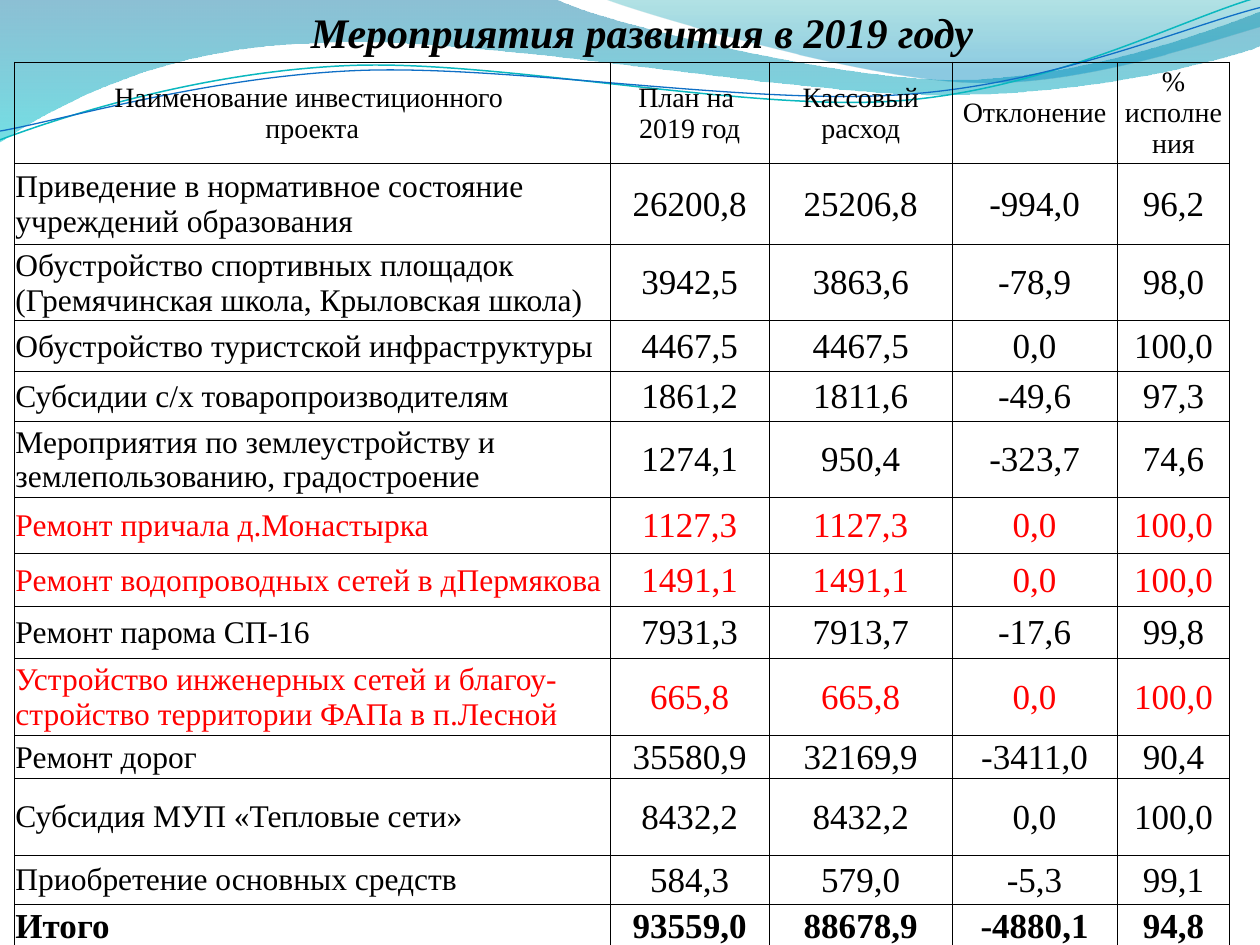
from dataclasses import dataclass
from math import cos, radians, sin
from typing import NamedTuple

from lxml.etree import SubElement
from pptx import Presentation
from pptx.dml.color import RGBColor as RGB
from pptx.enum.text import MSO_ANCHOR as ANCHOR, PP_ALIGN as ALIGN
from pptx.oxml.ns import qn
from pptx.util import Emu, Inches, Pt

COLUMNS, ROWS = 100, 75
UNIT = Inches(0.1)


@dataclass(frozen=True)
class Theme:
    font: str = "Times New Roman"
    text: str = "000000"
    accent: str = "FF0000"
    border: str = "000000"
    border_pt: float = 0.5
    title_pt: int = 24
    header_pt: int = 16
    name_pt: int = 18
    value_pt: int = 20


class Stop(NamedTuple):
    position: float
    color: str
    opacity: int


class Wave(NamedTuple):
    start: tuple
    segments: list
    stops: tuple = ()
    line: str = ""
    width: float = 0
    tilt: float = 0
    center: tuple = (0, 0)


class Project(NamedTuple):
    height: float
    cells: tuple
    red: bool = False
    total: bool = False


THEME = Theme()

WAVES = [
    Wave((0, 0), [
        (44, -0.1), (47.6, 1.7, 66.4, 6.3, 75.8, 6.3), (85.3, 6.3, 95.8, 2.6, 100, 0.9),
        (100.1, 3.6), (98.3, 4.4, 87, 7.6, 74.6, 7.5), (62.2, 7.5, 38.2, 2.8, 25.7, 3.4),
        (12.9, 3.6, 4.6, 8.3, -0.1, 11.3), (0, 0),
    ], stops=(Stop(0, "0074A1", 45), Stop(1, "00C6CF", 55))),
    Wave((47.9, -0.1), [
        (50.9, 1.1, 68.2, 6.2, 76.9, 6.5), (85.6, 6.9, 96.1, 3.2, 100, 2.1), (100, 0),
        (47.9, -0.1),
    ], stops=(Stop(0, "00A1A9", 30), Stop(0.8, "008BBF", 45))),
    Wave((0, 11.1), [
        (4.8, 9.3, 15.8, 5.7, 27.7, 5.2), (39.5, 4.7, 59.3, 8.9, 71.3, 8),
        (83.3, 7.1, 93.8, 1.5, 99.8, -0.2),
    ], line="0AB8BF", width=0.85, tilt=-2.7, center=(49.9, 5.75)),
    Wave((0, 10.4), [
        (4.7, 9.6, 16.4, 6.1, 28.3, 5.6), (40.3, 5.1, 59.7, 8.4, 71.7, 7.5),
        (83.6, 6.7, 94.1, 2.1, 100, 0.6),
    ], line="0F6FC6", width=0.75, tilt=-2.7, center=(49.95, 5.9)),
]

COLUMN_WIDTHS = (47.25, 12.65, 14.5, 13.1, 8.95)
HEADER = Project(7.4, ("Наименование инвестиционного \nпроекта", "План на \n2019 год",
                       "Кассовый расход", "Отклонение", "% исполнения"))
PROJECTS = [
    Project(6.4, ("Приведение в нормативное состояние учреждений образования",
                  "26200,8", "25206,8", "-994,0", "96,2")),
    Project(5.5, ("Обустройство спортивных площадок (Гремячинская школа, Крыловская школа)",
                  "3942,5", "3863,6", "-78,9", "98,0")),
    Project(4, ("Обустройство туристской инфраструктуры", "4467,5", "4467,5", "0,0", "100,0")),
    Project(3.95, ("Субсидии с/х товаропроизводителям", "1861,2", "1811,6", "-49,6", "97,3")),
    Project(6.1, ("Мероприятия по землеустройству и землепользованию, градостроение",
                  "1274,1", "950,4", "-323,7", "74,6")),
    Project(4.43, ("Ремонт причала д.Монастырка", "1127,3", "1127,3", "0,0", "100,0"), red=True),
    Project(4.2, ("Ремонт водопроводных сетей в дПермякова",
                  "1491,1", "1491,1", "0,0", "100,0"), red=True),
    Project(4.14, ("Ремонт парома СП-16", "7931,3", "7913,7", "-17,6", "99,8")),
    Project(6.1, ("Устройство инженерных сетей и благоу-стройство территории ФАПа в п.Лесной",
                  "665,8", "665,8", "0,0", "100,0"), red=True),
    Project(3.2, ("Ремонт дорог", "35580,9", "32169,9", "-3411,0", "90,4")),
    Project(6.1, ("Субсидия МУП «Тепловые сети»", "8432,2", "8432,2", "0,0", "100,0")),
    Project(3.9, ("Приобретение основных средств", "584,3", "579,0", "-5,3", "99,1")),
    Project(3.1, ("Итого", "93559,0", "88678,9", "-4880,1", "94,8"), total=True),
]


def grid(n: float) -> Emu:
    return Emu(round(n * UNIT))


def untilt(point: tuple, wave: Wave) -> tuple:
    angle, (cx, cy) = radians(-wave.tilt), wave.center
    dx, dy = point[0] - cx, point[1] - cy
    return (grid(cx + dx * cos(angle) - dy * sin(angle)),
            grid(cy + dx * sin(angle) + dy * cos(angle)))


def bend(sp, segments: list) -> None:
    lines = iter(list(sp._element.spPr.iter(qn("a:lnTo"))))
    for segment in segments:
        line = next(lines)
        if len(segment) == 6:
            line.tag = qn("a:cubicBezTo")
            for _ in range(2):
                control = next(lines)
                line.append(control[0])
                control.getparent().remove(control)


def draw_wave(s, wave: Wave) -> None:
    points = [pair for segment in wave.segments for pair in zip(segment[::2], segment[1::2])]
    start, *rest = [untilt(point, wave) for point in (wave.start, *points)]
    builder = s.shapes.build_freeform(*start)
    builder.add_line_segments(rest, close=bool(wave.stops))
    sp = builder.convert_to_shape()
    bend(sp, wave.segments)
    sp.rotation = wave.tilt
    sp.shadow.inherit = False
    if wave.stops:
        sp.line.fill.background()
        sp.fill.gradient()
        sp.fill.gradient_angle = 270
        for gradient_stop, stop in zip(sp.fill.gradient_stops, wave.stops):
            gradient_stop.position = stop.position
            gradient_stop.color.rgb = RGB.from_string(stop.color)
        for color, stop in zip(sp._element.spPr.iter(qn("a:srgbClr")), wave.stops):
            SubElement(color, qn("a:alpha"), val=str(stop.opacity * 1000))
    else:
        sp.fill.background()
        sp.line.color.rgb = RGB.from_string(wave.line)
        sp.line.width = Pt(wave.width)


def write(tf, text: str, size: int, align, color: str = THEME.text,
          bold: bool = False, italic: bool = False) -> None:
    tf.text = text
    for p in tf.paragraphs:
        p.alignment = align
        for r in p.runs:
            r.font.name, r.font.size = THEME.font, Pt(size)
            r.font.bold, r.font.italic = bold, italic
            r.font.color.rgb = RGB.from_string(color)


def outline(cell) -> None:
    tc_pr = cell._tc.get_or_add_tcPr()
    for side in ("lnL", "lnR", "lnT", "lnB"):
        ln = SubElement(tc_pr, qn(f"a:{side}"), w=str(Pt(THEME.border_pt)))
        SubElement(SubElement(ln, qn("a:solidFill")), qn("a:srgbClr"), val=THEME.border)


def draw_cell(cell, text: str, project: Project, column: int) -> None:
    outline(cell)
    cell.fill.background()
    cell.vertical_anchor = ANCHOR.MIDDLE
    cell.margin_left = cell.margin_right = cell.margin_top = grid(0.07)
    cell.margin_bottom = 0
    header, name = project is HEADER, column == 0
    size = THEME.name_pt if name and not project.total else THEME.value_pt
    align = ALIGN.JUSTIFY if project.total else ALIGN.LEFT
    write(cell.text_frame, text, THEME.header_pt if header else size,
          align if name and not header else ALIGN.CENTER,
          THEME.accent if project.red else THEME.text, bold=project.total)


def draw_table(s, projects: list) -> None:
    table = s.shapes.add_table(
        len(projects), len(COLUMN_WIDTHS), grid(1.16), grid(4.92),
        grid(sum(COLUMN_WIDTHS)), grid(sum(p.height for p in projects))).table
    table.first_row = table.horz_banding = False
    for column, width in zip(table.columns, COLUMN_WIDTHS):
        column.width = grid(width)
    for row, project in zip(table.rows, projects):
        row.height = grid(project.height)
        for i, (cell, text) in enumerate(zip(row.cells, project.cells)):
            draw_cell(cell, text, project, i)


def draw_title(s, text: str) -> None:
    tf = s.shapes.add_textbox(grid(5.1), 0, grid(91.7), grid(7.1)).text_frame
    tf.word_wrap = True
    write(tf, text, THEME.title_pt, ALIGN.CENTER, bold=True, italic=True)


def main() -> None:
    prs = Presentation()
    prs.slide_width, prs.slide_height = grid(COLUMNS), grid(ROWS)
    s = prs.slides.add_slide(prs.slide_layouts[6])
    for wave in WAVES:
        draw_wave(s, wave)
    draw_title(s, " Мероприятия развития в 2019 году ")
    draw_table(s, [HEADER, *PROJECTS])
    prs.save("out.pptx")


if __name__ == "__main__":
    main()
